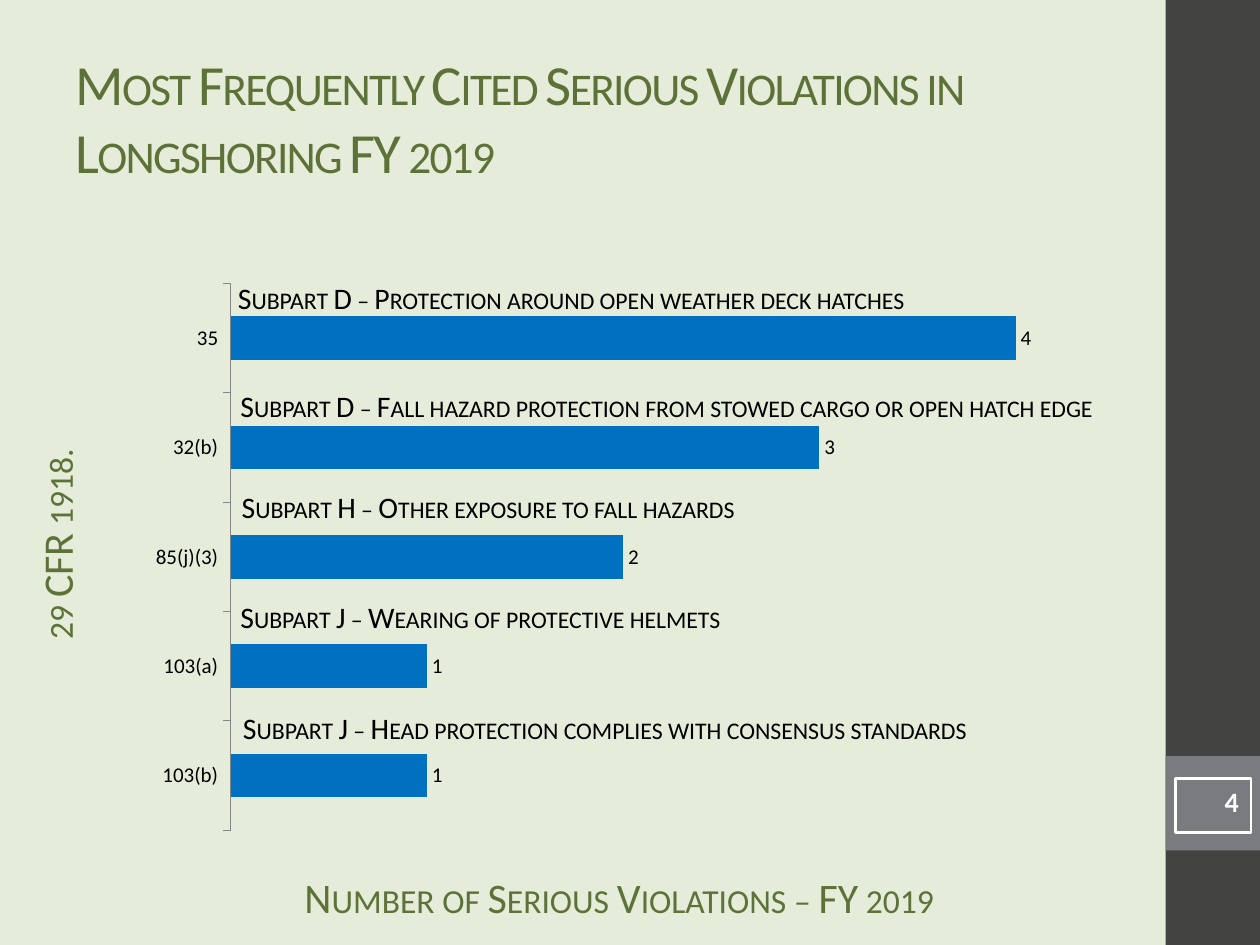
import pptx
import pptx.chart.data
import pptx.dml.color
import pptx.enum.chart
import pptx.enum.shapes
import pptx.enum.text
import pptx.oxml
import pptx.oxml.ns
import pptx.util
from dataclasses import dataclass

Inches = pptx.util.Inches
Pt = pptx.util.Pt
RGB = pptx.dml.color.RGBColor.from_string
Align = pptx.enum.text.PP_ALIGN
Anchor = pptx.enum.text.MSO_ANCHOR


@dataclass
class Theme:
    font: str = "Calibri"
    back: str = "E5ECD9"
    band: str = "434342"
    tab: str = "797B7E"
    green: str = "5D7238"
    bar: str = "0070C0"
    axis: str = "868686"
    black: str = "000000"
    white: str = "FFFFFF"
    title: float = 32.4
    head: float = 24
    note: float = 17
    page: float = 16
    tick: float = 12


theme = Theme()

TITLE = "Most Frequently Cited Serious Violations in Longshoring FY 2019"
X_NAME = "Number of Serious Violations – FY 2019"
Y_NAME = "29 CFR 1918."
PAGE = "4"

# Rule, count, note, and place (left, top, width) of the note; top bar first
RULES = [
    ("35", 4, "Subpart D – Protection around open weather deck hatches",
     (1.79, 2.17, 5.67)),
    ("32(b)", 3, "Subpart D – Fall hazard protection from stowed cargo or open hatch edge",
     (1.81, 3.03, 7.19)),
    ("85(j)(3)", 2, "Subpart H – Other exposure to fall hazards",
     (1.82, 3.83, 4.26)),
    ("103(a)", 1, "Subpart J – Wearing of protective helmets",
     (1.81, 4.7, 6.83)),
    ("103(b)", 1, "Subpart J – Head protection complies with consensus standards",
     (1.83, 5.58, 7.25)),
]
NOTE_H = 0.39
CHART = (1.08, 2.17, 7.92, 4.52)
PLOT = (1.83, 2.25, 7.01, 4.34)


def style(font, size, color):
    font.name = theme.font
    font.size = Pt(size)
    font.color.rgb = RGB(color)


def write(shape, text, size, color, align=Align.LEFT, anchor=Anchor.TOP, caps=True):
    frame = shape.text_frame
    frame.vertical_anchor = anchor
    para = frame.paragraphs[0]
    para.alignment = align
    run = para.add_run()
    run.text = text
    style(run.font, size, color)
    if caps:
        run.font._element.set("cap", "small")
    return run


def add_text(slide, box, text, size, color, wrap=True, **kinds):
    shape = slide.shapes.add_textbox(*map(Inches, box))
    shape.text_frame.word_wrap = wrap
    write(shape, text, size, color, **kinds)
    return shape


def add_name(slide, box, text):
    """Add a centred axis name with tight top and bottom insets."""
    shape = add_text(slide, box, text, theme.head, theme.green, align=Align.CENTER)
    shape.text_frame.margin_top = 0
    shape.text_frame.margin_bottom = Inches(0.05)
    return shape


def add_box(slide, box, fill=None, line=None):
    kind = pptx.enum.shapes.MSO_SHAPE.RECTANGLE
    shape = slide.shapes.add_shape(kind, *map(Inches, box))
    shape.shadow.inherit = False
    if fill:
        shape.fill.solid()
        shape.fill.fore_color.rgb = RGB(fill)
    else:
        shape.fill.background()
    if line:
        shape.line.color.rgb = RGB(line)
        shape.line.width = Pt(1.5)
    else:
        shape.line.fill.background()
    return shape


def fix_plot(chart):
    """Pin the inner plot area to PLOT, as shares of the chart frame."""
    left, top, wide, high = CHART
    shares = {
        "x": (PLOT[0] - left) / wide,
        "y": (PLOT[1] - top) / high,
        "w": PLOT[2] / wide,
        "h": PLOT[3] / high,
    }
    parts = '<c:layoutTarget val="inner"/><c:xMode val="edge"/><c:yMode val="edge"/>'
    parts += "".join(f'<c:{key} val="{val:.4f}"/>' for key, val in shares.items())
    names = pptx.oxml.ns.nsdecls("c")
    layout = pptx.oxml.parse_xml(
        f"<c:layout {names}><c:manualLayout>{parts}</c:manualLayout></c:layout>")
    area = chart._chartSpace.chart.plotArea
    for old in area.findall(pptx.oxml.ns.qn("c:layout")):
        area.remove(old)
    area.insert(0, layout)


def add_bars(slide):
    rows = RULES[::-1]
    data = pptx.chart.data.CategoryChartData()
    data.categories = [row[0] for row in rows]
    data.add_series("Series 1", [row[1] for row in rows])
    kind = pptx.enum.chart.XL_CHART_TYPE.BAR_CLUSTERED
    chart = slide.shapes.add_chart(kind, *map(Inches, CHART), data).chart
    chart.has_legend = False
    chart.has_title = False
    style(chart.font, theme.tick, theme.black)

    axis = chart.category_axis
    axis.major_tick_mark = pptx.enum.chart.XL_TICK_MARK.OUTSIDE
    axis.format.line.color.rgb = RGB(theme.axis)
    style(axis.tick_labels.font, theme.tick, theme.black)
    scale = chart.value_axis
    scale.minimum_scale, scale.maximum_scale = 0, 4.5
    scale.has_major_gridlines = False
    scale.visible = False

    plot = chart.plots[0]
    plot.gap_width = 150
    plot.vary_by_categories = False
    series = plot.series[0]
    series.format.fill.solid()
    series.format.fill.fore_color.rgb = RGB(theme.bar)
    labels = series.data_labels
    labels.show_value = True
    labels.position = pptx.enum.chart.XL_LABEL_POSITION.OUTSIDE_END
    style(labels.font, theme.tick, theme.black)
    fix_plot(chart)


def main():
    deck = pptx.Presentation()
    deck.slide_width, deck.slide_height = Inches(10), Inches(7.5)
    slide = deck.slides.add_slide(deck.slide_layouts[6])
    slide.background.fill.solid()
    slide.background.fill.fore_color.rgb = RGB(theme.back)

    add_box(slide, (9.25, 0, 0.75, 7.5), theme.band)
    add_box(slide, (9.25, 6, 0.75, 0.75), theme.tab)
    add_name(slide, (2.08, 6.92, 5.67, 0.33), X_NAME)
    add_bars(slide)

    title = add_text(slide, (0.5, 0.3, 8.33, 1.25), TITLE, theme.title,
                     theme.green, anchor=Anchor.MIDDLE)
    run = title.text_frame.paragraphs[0].runs[0]
    run.font._element.set("spc", "-100")

    page = add_box(slide, (9.33, 6.18, 0.6, 0.43), line=theme.white)
    run = write(page, PAGE, theme.page, theme.white, align=Align.RIGHT, caps=False)
    run.font.bold = True

    for _, _, note, place in RULES:
        add_text(slide, (*place, NOTE_H), note, theme.note, theme.black, wrap=False)
    add_name(slide, (-1.56, 4.03, 4.19, 0.58), Y_NAME).rotation = 270

    deck.save("out.pptx")


if __name__ == "__main__":
    main()
